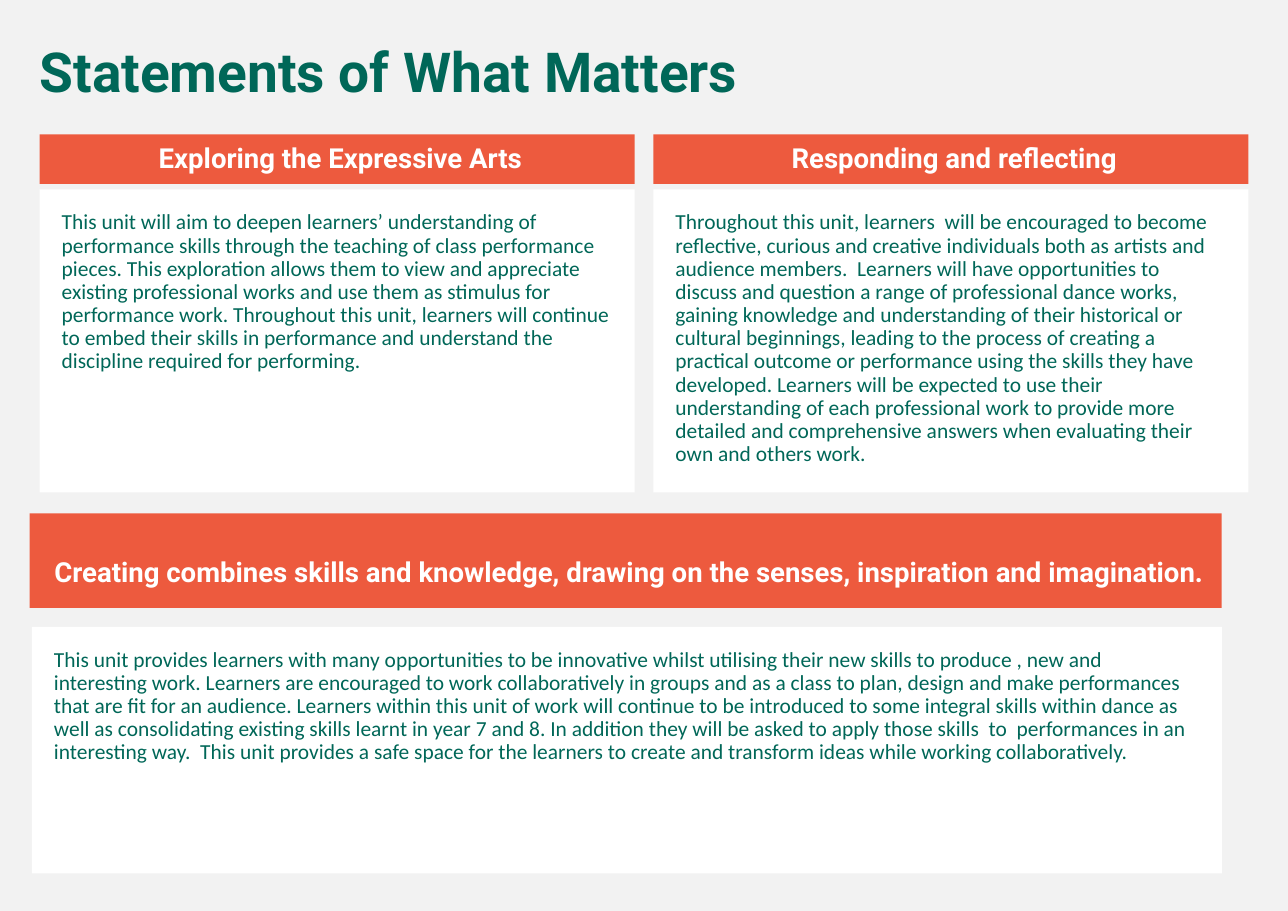
from lxml import etree
from pptx import Presentation
from pptx.dml.color import RGBColor
from pptx.enum import shapes, text
from pptx.oxml import ns
from pptx.util import Pt

GREEN = RGBColor(0x00, 0x67, 0x58)
ORANGE = RGBColor(0xED, 0x5A, 0x3E)
WHITE = RGBColor(0xFF, 0xFF, 0xFF)
GREY = RGBColor(0xF2, 0xF2, 0xF2)

LEFT, PITCH, WIDTH = 25.9, 401.1, 388.8

COLUMNS = [
    ("Exploring the Expressive Arts",
     "This unit will aim to deepen learners’ understanding of performance skills "
     "through the teaching of class performance pieces. This exploration allows them "
     "to view and appreciate existing professional works and use them as stimulus for "
     "performance work. Throughout this unit, learners will continue to embed their "
     "skills in performance and understand the discipline required for performing."),
    ("Responding and reflecting",
     "Throughout this unit, learners  will be encouraged to become reflective, curious "
     "and creative individuals both as artists and audience members.  Learners will "
     "have opportunities to discuss and question a range of professional dance works, "
     "gaining knowledge and understanding of their historical or cultural beginnings, "
     "leading to the process of creating a practical outcome or performance using the "
     "skills they have developed. Learners will be expected to use their understanding "
     "of each professional work to provide more detailed and comprehensive answers when "
     "evaluating their own and others work."),
]
CREATE_HEAD = ("Creating combines skills and knowledge, drawing on the senses, "
               "inspiration and imagination.")
CREATE_BODY = (
    "This unit provides learners with many opportunities to be innovative whilst "
    "utilising their new skills to produce , new and interesting work. Learners are "
    "encouraged to work collaboratively in groups and as a class to plan, design and "
    "make performances that are fit for an audience. Learners within this unit of work "
    "will continue to be introduced to some integral skills within dance as well as "
    "consolidating existing skills learnt in year 7 and 8. In addition they will be "
    "asked to apply those skills  to  performances in an interesting way.  This unit "
    "provides a safe space for the learners to create and transform ideas while working "
    "collaboratively.")


def place(shape, box):
    shape.left, shape.top, shape.width, shape.height = map(Pt, box)


def paint(shape, color):
    shape.shadow.inherit = False
    shape.fill.solid()
    shape.fill.fore_color.rgb = color
    shape.line.fill.background()


def write(shape, words, font, size, color, bold, align, anchor, insets):
    frame = shape.text_frame
    frame.text = words
    frame.word_wrap = True
    frame.auto_size = text.MSO_AUTO_SIZE.NONE
    frame.vertical_anchor = anchor
    (frame.margin_left, frame.margin_top,
     frame.margin_right, frame.margin_bottom) = map(Pt, insets)
    para = frame.paragraphs[0]
    para.alignment = align
    para.line_spacing = 0.9
    para.space_before = Pt(11)
    props = para._p.get_or_add_pPr()
    props.set("marL", "0")
    props.set("indent", "0")
    etree.SubElement(props, ns.qn("a:buNone"))
    para.font.name = font
    para.font.size = Pt(size)
    para.font.bold = bold
    para.font.color.rgb = color


def add_title(shape, words):
    place(shape, (18.7, 25.9, 797.8, 46.8))
    write(shape, words, "Roboto", 36, GREEN, True, text.PP_ALIGN.LEFT,
          text.MSO_ANCHOR.TOP, (7.2, 3.6, 7.2, 3.6))


def add_head(shape, words, box, top=3.6):
    place(shape, box)
    paint(shape, ORANGE)
    write(shape, words, "Roboto", 18, WHITE, True, text.PP_ALIGN.CENTER,
          text.MSO_ANCHOR.MIDDLE, (11.5, top, 7.2, 3.6))


def add_body(shape, words, box):
    place(shape, box)
    paint(shape, WHITE)
    write(shape, words, "Calibri", 14, GREEN, False, text.PP_ALIGN.LEFT,
          text.MSO_ANCHOR.TOP, (14.4, 14.4, 14.4, 14.4))


def add_rect(slide):
    return slide.shapes.add_shape(shapes.MSO_SHAPE.RECTANGLE, 0, 0, Pt(10), Pt(10))


def main():
    deck = Presentation()
    deck.slide_width, deck.slide_height = Pt(841.68), Pt(595.44)
    slide = deck.slides.add_slide(deck.slide_layouts.get_by_name("Comparison"))
    slide.background.fill.solid()
    slide.background.fill.fore_color.rgb = GREY

    add_title(slide.shapes.title, "Statements of What Matters")
    holders = slide.placeholders
    for i, (head, body) in enumerate(COLUMNS):
        x = LEFT + i * PITCH
        add_head(holders[2 * i + 1], head, (x, 87.8, WIDTH, 32.4))
        add_body(holders[2 * i + 2], body, (x, 123.8, WIDTH, 198))

    add_head(add_rect(slide), CREATE_HEAD, (19.4, 335.5, 779, 61.9), top=20)
    add_body(add_rect(slide), CREATE_BODY, (20.9, 409.7, 777.6, 161.3))
    deck.save("out.pptx")


if __name__ == "__main__":
    main()
